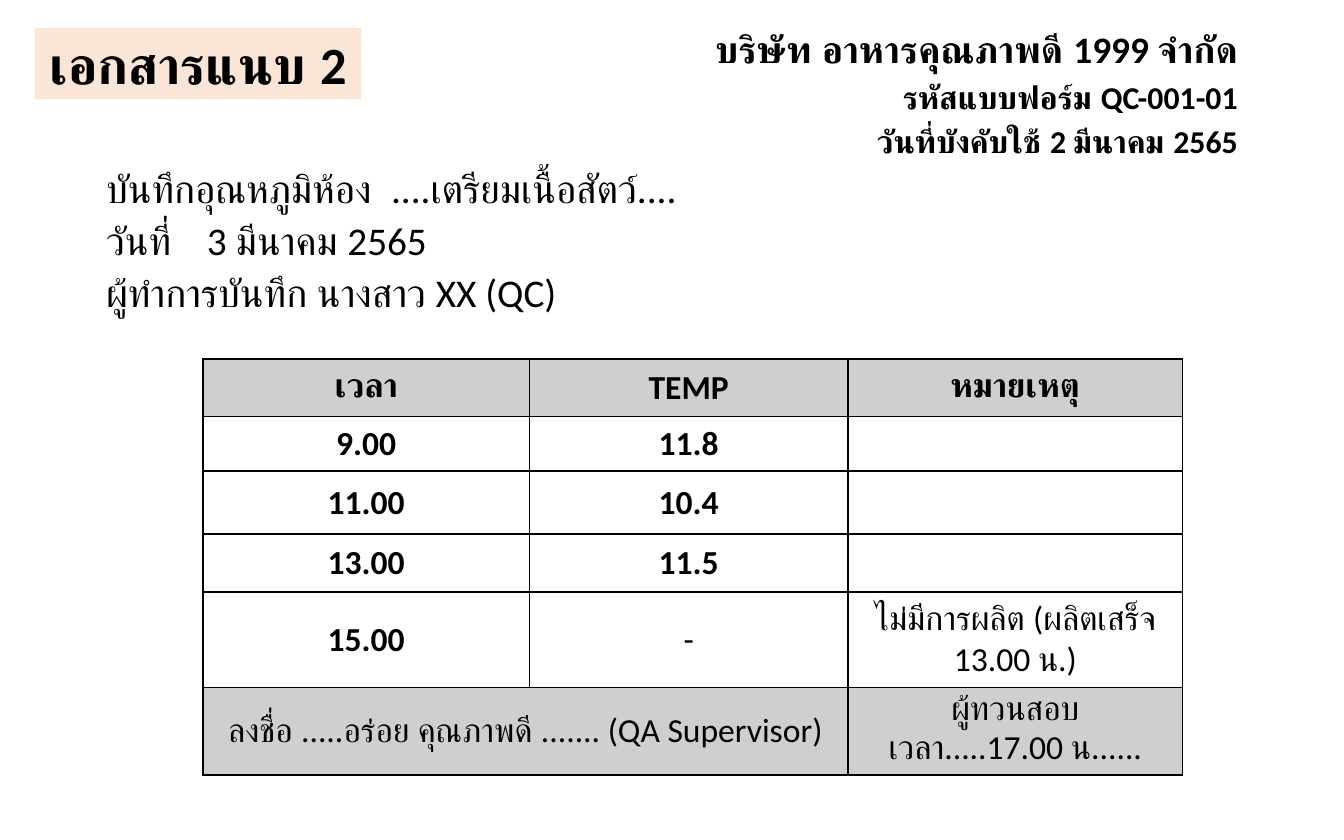
from lxml.etree import SubElement
from pptx import Presentation
from pptx.dml.color import RGBColor
from pptx.enum.text import MSO_ANCHOR as Anchor, MSO_AUTO_SIZE as AutoSize, PP_ALIGN as Align
from pptx.oxml.ns import qn
from pptx.util import Inches, Pt

BLACK = RGBColor(0x00, 0x00, 0x00)
GREY = RGBColor(0xD0, 0xCE, 0xCE)
PEACH = RGBColor(0xFB, 0xE5, 0xD6)
FONT = "Calibri"

BADGE = "เอกสารแนบ 2"
FORM_LINES = [
    ("บริษัท อาหารคุณภาพดี 1999 จำกัด", 20, True, Align.RIGHT),
    ("รหัสแบบฟอร์ม QC-001-01", 17, True, Align.RIGHT),
    ("วันที่บังคับใช้ 2 มีนาคม 2565", 17, True, Align.RIGHT),
    ("บันทึกอุณหภูมิห้อง  ....เตรียมเนื้อสัตว์....", 21, False, Align.LEFT),
    ("วันที่ \t3 มีนาคม 2565", 21, False, Align.LEFT),
    ("ผู้ทำการบันทึก นางสาว XX (QC)", 21, False, Align.LEFT),
]
LOG = [
    ("เวลา", "TEMP", "หมายเหตุ"),
    ("9.00", "11.8", ""),
    ("11.00", "10.4", ""),
    ("13.00", "11.5", ""),
    ("15.00", "-", "ไม่มีการผลิต (ผลิตเสร็จ 13.00 น.)"),
    ("ลงชื่อ .....อร่อย คุณภาพดี ....... (QA Supervisor)", "", "ผู้ทวนสอบ เวลา.....17.00 น......"),
]
COLUMN_WIDTHS = [2.43, 2.37, 2.49]
ROW_HEIGHTS = [0.43, 0.4, 0.47, 0.43, 0.71, 0.65]
SIGN_ROW = len(LOG) - 1


def place(holder, left, top, width, height):
    holder.left, holder.top = Inches(left), Inches(top)
    holder.width, holder.height = Inches(width), Inches(height)


def style(paragraph, size, bold, align):
    paragraph.alignment = align
    font = paragraph.font
    font.name, font.size, font.bold = FONT, Pt(size), bold
    font.color.rgb = BLACK


def add_borders(cell):
    properties = cell._tc.get_or_add_tcPr()
    for side in ("a:lnL", "a:lnR", "a:lnT", "a:lnB"):
        line = SubElement(properties, qn(side), w=str(Pt(1)))
        SubElement(SubElement(line, qn("a:solidFill")), qn("a:srgbClr"), val=str(BLACK))


def add_badge(slide):
    badge = slide.shapes.title
    place(badge, 0.26, 0.21, 2.43, 0.53)
    badge.fill.solid()
    badge.fill.fore_color.rgb = PEACH
    frame = badge.text_frame
    frame.text = BADGE
    frame.word_wrap, frame.auto_size = False, AutoSize.NONE
    frame.vertical_anchor = Anchor.MIDDLE
    style(frame.paragraphs[0], 28, True, Align.CENTER)


def add_form_lines(slide):
    body = slide.placeholders[1]
    place(body, 0.69, 0.21, 8.62, 2.31)
    frame = body.text_frame
    frame.text = "\n".join(line[0] for line in FORM_LINES)
    frame.auto_size = AutoSize.NONE
    for paragraph, (_, size, bold, align) in zip(frame.paragraphs, FORM_LINES):
        style(paragraph, size, bold, align)
        paragraph.line_spacing = 0.8
        paragraph.space_before = Pt(7.5)
        properties = paragraph._p.get_or_add_pPr()
        for name, value in (("marL", 0), ("indent", 0), ("defTabSz", Inches(0.75))):
            properties.set(name, str(value))
        bullet = SubElement(properties, qn("a:buNone"))
        properties.find(qn("a:defRPr")).addprevious(bullet)


def add_log(slide):
    log = slide.shapes.add_table(
        len(LOG), len(COLUMN_WIDTHS), Inches(1.51), Inches(2.67),
        Inches(sum(COLUMN_WIDTHS)), Inches(sum(ROW_HEIGHTS))).table
    for column, width in zip(log.columns, COLUMN_WIDTHS):
        column.width = Inches(width)
    for r, (entries, height) in enumerate(zip(LOG, ROW_HEIGHTS)):
        log.rows[r].height = Inches(height)
        for c, entry in enumerate(entries):
            cell = log.cell(r, c)
            add_borders(cell)
            if r in (0, SIGN_ROW):
                cell.fill.solid()
                cell.fill.fore_color.rgb = GREY
            else:
                cell.fill.background()
            if r == SIGN_ROW:
                cell.margin_top = cell.margin_bottom = Inches(0.02)
            cell.text = entry
            cell.vertical_anchor = Anchor.MIDDLE
            bold = r < SIGN_ROW - 1 or (r < SIGN_ROW and c == 0)
            style(cell.text_frame.paragraphs[0], 18, bold, Align.CENTER)
    log.cell(SIGN_ROW, 0).merge(log.cell(SIGN_ROW, 1))


def main():
    """Build the room temperature record slide."""
    deck = Presentation()
    deck.slide_width, deck.slide_height = Inches(10), Inches(6.25)
    slide = deck.slides.add_slide(deck.slide_layouts[1])
    add_badge(slide)
    add_form_lines(slide)
    add_log(slide)
    deck.save("out.pptx")


if __name__ == "__main__":
    main()
